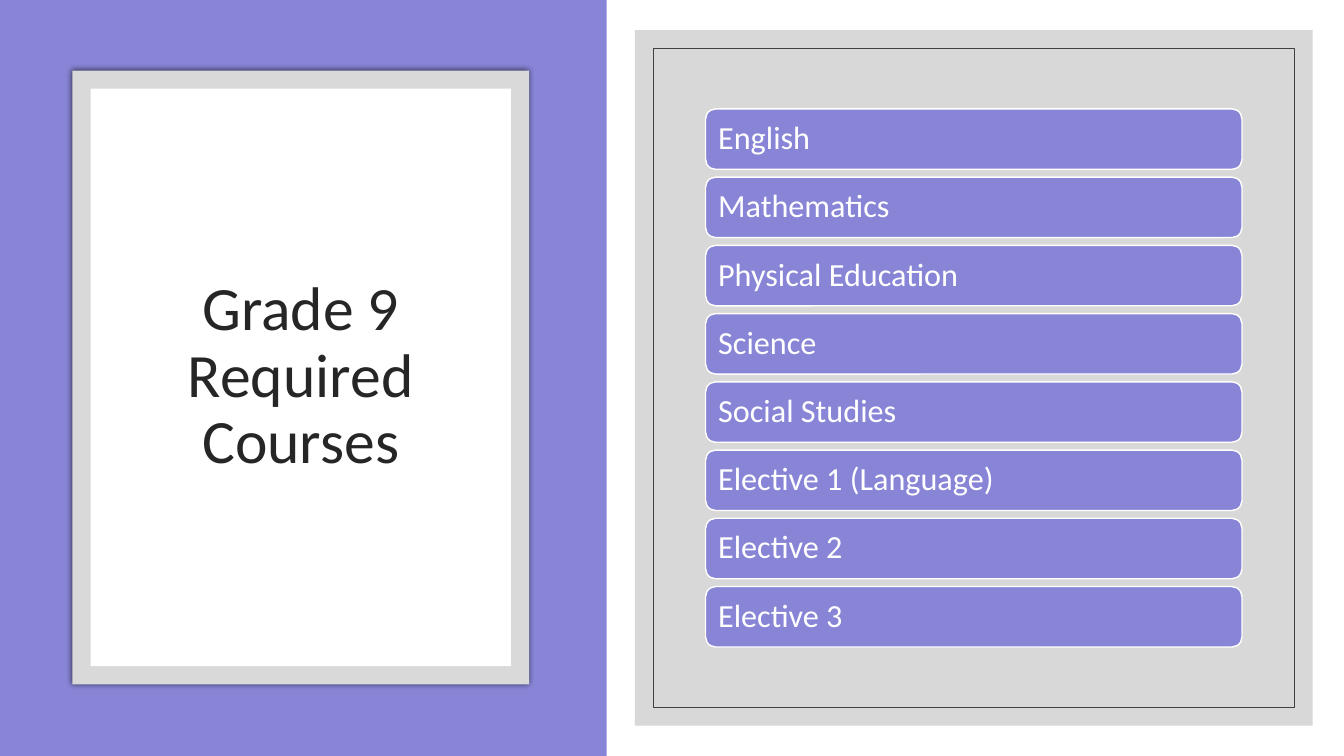
from collections import namedtuple
from dataclasses import dataclass

from lxml import etree
from pptx import Presentation
from pptx.dml.color import RGBColor
from pptx.enum.shapes import MSO_SHAPE
from pptx.enum.text import MSO_ANCHOR, PP_ALIGN
from pptx.oxml.ns import qn
from pptx.util import Pt

RECTANGLE = MSO_SHAPE.RECTANGLE
ROUNDED = MSO_SHAPE.ROUNDED_RECTANGLE
MIDDLE = MSO_ANCHOR.MIDDLE
LEFT, CENTER = PP_ALIGN.LEFT, PP_ALIGN.CENTER

Box = namedtuple("Box", "left top width height")


@dataclass(frozen=True)
class Theme:
    """Colours, font and type sizes of the slide."""
    accent: str = "8885D7"
    white: str = "FFFFFF"
    mat: str = "D9D9D9"
    panel: str = "BFBFBF"
    frame: str = "404040"
    title: str = "262626"
    shadow: str = "000000"
    font: str = "Calibri"
    title_size: float = 44
    course_size: float = 23


THEME = Theme()
COURSES = [
    "English", "Mathematics", "Physical Education", "Science",
    "Social Studies", "Elective 1 (Language)", "Elective 2", "Elective 3",
]


def inset(box, dx, dy):
    """Return the box shrunk by dx and dy on each side."""
    return Box(box.left + dx, box.top + dy, box.width - 2 * dx, box.height - 2 * dy)


def add_block(slide, box, fill=None, line=None, line_width=1, kind=RECTANGLE):
    """Add a flat shape with an optional fill and outline."""
    shape = slide.shapes.add_shape(kind, *map(Pt, box))
    shape.shadow.inherit = False
    if fill:
        shape.fill.solid()
        shape.fill.fore_color.rgb = RGBColor.from_string(fill)
    else:
        shape.fill.background()
    if line:
        shape.line.color.rgb = RGBColor.from_string(line)
        shape.line.width = Pt(line_width)
    else:
        shape.line.fill.background()
    return shape


def set_alpha(color, percent):
    """Give a colour element an opacity."""
    etree.SubElement(color, qn("a:alpha")).set("val", str(percent * 1000))


def add_glow_shadow(shape, blur, percent):
    """Add a centred soft shadow to a shape."""
    effects = shape._element.spPr.find(qn("a:effectLst"))
    shadow = etree.SubElement(effects, qn("a:outerShdw"), blurRad=str(Pt(blur)), dist="0", dir="0")
    color = etree.SubElement(shadow, qn("a:srgbClr"), val=THEME.shadow)
    set_alpha(color, percent)


def write_text(shape, text, size, color, alignment, margin_x, margin_y):
    """Write one vertically centred paragraph in a shape."""
    frame = shape.text_frame
    frame.word_wrap = True
    frame.vertical_anchor = MIDDLE
    frame.margin_left = frame.margin_right = Pt(margin_x)
    frame.margin_top = frame.margin_bottom = Pt(margin_y)
    paragraph = frame.paragraphs[0]
    paragraph.alignment = alignment
    paragraph.line_spacing = 0.9
    run = paragraph.add_run()
    run.text = text
    run.font.name = THEME.font
    run.font.size = Pt(size)
    run.font.color.rgb = RGBColor.from_string(color)


def add_title_side(slide, box, title):
    """Draw the coloured side with its matted title card."""
    add_block(slide, box, THEME.accent)
    card = Box(box.left + 51.8, box.top + 50.4, 326.2, 438.5)
    mat = add_block(slide, card, THEME.mat)
    add_glow_shadow(mat, 4, 66)
    page = inset(card, 13, 13)
    add_block(slide, page, THEME.white)
    title_box = slide.shapes.add_textbox(*map(Pt, inset(page, 12.6, 29.8)))
    write_text(title_box, title, THEME.title_size, THEME.title, CENTER, 7.2, 3.6)


def add_course_panel(slide, box, courses):
    """Draw the framed panel with one bar per course."""
    panel = add_block(slide, box, THEME.panel)
    set_alpha(panel._element.spPr.find(qn("a:solidFill"))[0], 60)
    add_block(slide, inset(box, 13, 13), line=THEME.frame, line_width=0.5)
    area = inset(box, 50.4, 56.2)
    height, pitch = 43.2, 48.74
    for index, course in enumerate(courses):
        bar_box = Box(area.left, area.top + index * pitch, area.width, height)
        bar = add_block(slide, bar_box, THEME.accent, THEME.white, kind=ROUNDED)
        write_text(bar, course, THEME.course_size, THEME.white, LEFT, 6.9, 6.9)


def main():
    """Build and save the presentation."""
    presentation = Presentation()
    presentation.slide_width, presentation.slide_height = Pt(960), Pt(540)
    slide = presentation.slides.add_slide(presentation.slide_layouts[6])
    add_title_side(slide, Box(0, 0, 433.4, 540), "Grade 9 Required Courses")
    add_course_panel(slide, Box(453.6, 21.6, 484, 496.8), COURSES)
    presentation.save("out.pptx")


if __name__ == "__main__":
    main()
